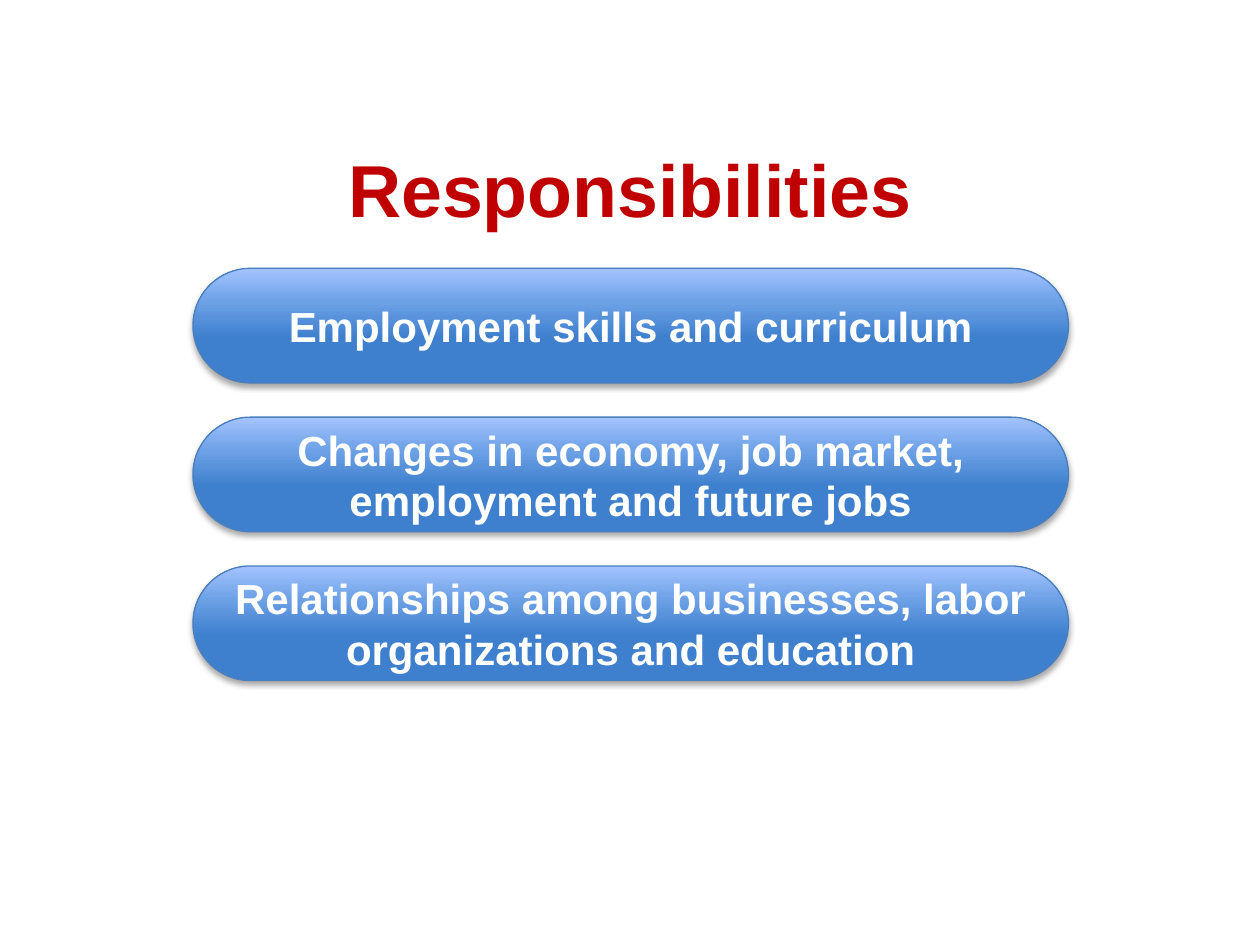
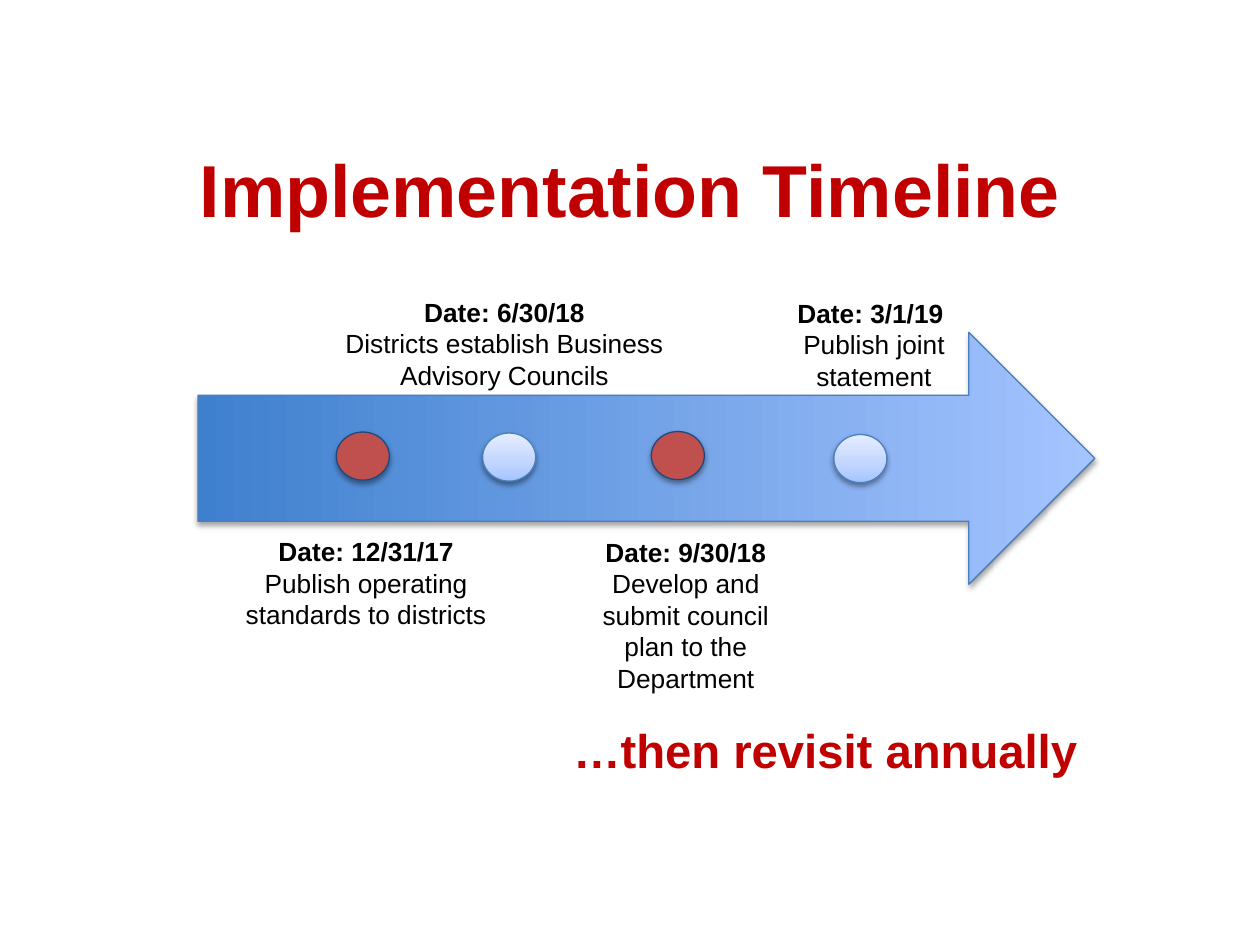
from lxml import etree
from pptx import Presentation
from pptx.dml.color import RGBColor
from pptx.enum.shapes import MSO_SHAPE
from pptx.enum.text import MSO_ANCHOR, MSO_AUTO_SIZE, PP_ALIGN
from pptx.oxml.ns import qn
from pptx.util import Cm, Pt

PILL, ARROW, DOT = MSO_SHAPE.ROUNDED_RECTANGLE, MSO_SHAPE.UP_ARROW, MSO_SHAPE.FLOWCHART_CONNECTOR
CENTER, RIGHT = PP_ALIGN.CENTER, PP_ALIGN.RIGHT
TOP, MIDDLE = MSO_ANCHOR.TOP, MSO_ANCHOR.MIDDLE
GROW = MSO_AUTO_SIZE.SHAPE_TO_FIT_TEXT

FONT = "Arial"
RED, BLACK, WHITE = "C00000", "000000", "FFFFFF"
BLUE_LINE, NAVY_LINE, DOT_RED = "4B7EBC", "1F497D", "C0504D"
PILL_STOPS = [(40, "3F80CE"), (71, "6DA1E6"), (100, "A4C4FF")]
ARROW_STOPS = [(0, "3F80CE"), (100, "A4C4FF")]
DOT_STOPS = [(0, "A4C4FF"), (35, "BFD4FF"), (100, "E6EEFF")]


def color(hex_text):
    return RGBColor.from_string(hex_text)


class Deck:
    def __init__(self):
        self.deck = Presentation()
        self.deck.slide_width, self.deck.slide_height = Cm(25.4), Cm(19.05)
        self.page = None

    def add_page(self, title):
        self.page = self.deck.slides.add_slide(self.deck.slide_layouts[6])
        self.text(1.27, 2.9, 22.86, 1.73, [(title, True)], 42, RED)

    def add_lines(self, box, lines, size, ink, align=CENTER, anchor=TOP, insets=(0, 0)):
        """Fill a box with (text, bold) lines, one paragraph each."""
        frame = box.text_frame
        frame.word_wrap = True
        frame.vertical_anchor = anchor
        frame.margin_left = frame.margin_right = Cm(insets[0])
        frame.margin_top = frame.margin_bottom = Cm(insets[1])
        for index, (text, bold) in enumerate(lines):
            para = frame.add_paragraph() if index else frame.paragraphs[0]
            para.alignment = align
            span = para.add_run()
            span.text = text
            span.font.name, span.font.size, span.font.bold = FONT, Pt(size), bold
            span.font.color.rgb = color(ink)

    def text(self, left, top, width, height, lines, size, ink, align=CENTER):
        box = self.page.shapes.add_textbox(Cm(left), Cm(top), Cm(width), Cm(height))
        self.add_lines(box, lines, size, ink, align)
        return box

    def shape(self, kind, left, top, width, height, fill, line=BLUE_LINE, shade=35):
        """Add a shadowed shape; fill is a hex colour or upward gradient stops."""
        shape = self.page.shapes.add_shape(kind, Cm(left), Cm(top), Cm(width), Cm(height))
        if isinstance(fill, str):
            shape.fill.solid()
            shape.fill.fore_color.rgb = color(fill)
        else:
            self.gradient(shape, fill)
        shape.line.color.rgb = color(line)
        shape.line.width = Pt(0.75)
        self.shadow(shape, shade)
        return shape

    def gradient(self, shape, stops):
        shape.fill.gradient()
        shape.fill.gradient_angle = 90
        stop_list = shape._element.spPr.find(".//" + qn("a:gsLst"))
        for old_stop in list(stop_list):
            stop_list.remove(old_stop)
        for percent, hex_text in stops:
            stop = etree.SubElement(stop_list, qn("a:gs"), pos=str(percent * 1000))
            etree.SubElement(stop, qn("a:srgbClr"), val=hex_text)

    def shadow(self, shape, opacity):
        shape.shadow.inherit = False
        effects = shape._element.spPr.find(qn("a:effectLst"))
        outer = etree.SubElement(effects, qn("a:outerShdw"), blurRad=str(Pt(3.1)),
                                 dist=str(Pt(1.8)), dir="5400000", rotWithShape="0")
        shade = etree.SubElement(outer, qn("a:srgbClr"), val=BLACK)
        etree.SubElement(shade, qn("a:alpha"), val=str(opacity * 1000))

    def pill(self, top, text):
        pill = self.shape(PILL, 3.89, top, 17.65, 2.31, PILL_STOPS)
        pill.adjustments[0] = 0.5
        self.add_lines(pill, [(text, True)], 24, WHITE, anchor=MIDDLE, insets=(0.18, 0.1))

    def dot(self, left, top, red):
        fill, line = (DOT_RED, NAVY_LINE) if red else (DOT_STOPS, BLUE_LINE)
        self.shape(DOT, left, top, 1.07, 0.97, fill, line, shade=38)

    def milestone(self, place, date, task):
        self.text(*place, [(date, True), (task, False)], 15, BLACK)


def build_responsibilities(deck):
    deck.add_page("Responsibilities")
    duties = [
        "Employment skills and curriculum",
        "Changes in economy, job market, employment and future jobs",
        "Relationships among businesses, labor organizations and education",
    ]
    for row, duty in enumerate(duties):
        deck.pill(5.41 + 3 * row, duty)


def build_timeline(deck):
    deck.add_page("Implementation Timeline")
    arrow = deck.shape(ARROW, 10.49, 0.2, 5.08, 18.08, ARROW_STOPS)
    arrow.rotation = 90
    milestones = [
        ((6.78, 8.71), (4.95, 10.8, 4.86, 1.3),
         "Date: 12/31/17", "Publish operating standards to districts"),
        ((9.73, 8.73), (6.78, 5.97, 6.78, 1.68),
         "Date: 6/30/18", "Districts establish Business Advisory Councils"),
        ((13.13, 8.7), (11.96, 10.81, 3.73, 2.64),
         "Date: 9/30/18", "Develop and submit council plan to the Department"),
        ((16.81, 8.76), (16.03, 5.99, 3.18, 1.65),
         "Date: 3/1/19 ", "Publish joint statement"),
    ]
    for index, (dot_place, label_place, date, task) in enumerate(milestones):
        deck.dot(*dot_place, red=index % 2 == 0)
        deck.milestone(label_place, date, task)
    closing = deck.text(6.78, 14.55, 14.94, 1.14,
                        [("…then revisit annually", True)], 27, RED, RIGHT)
    closing.text_frame.auto_size = GROW


def main():
    deck = Deck()
    build_responsibilities(deck)
    build_timeline(deck)
    deck.deck.save("out.pptx")


if __name__ == "__main__":
    main()
